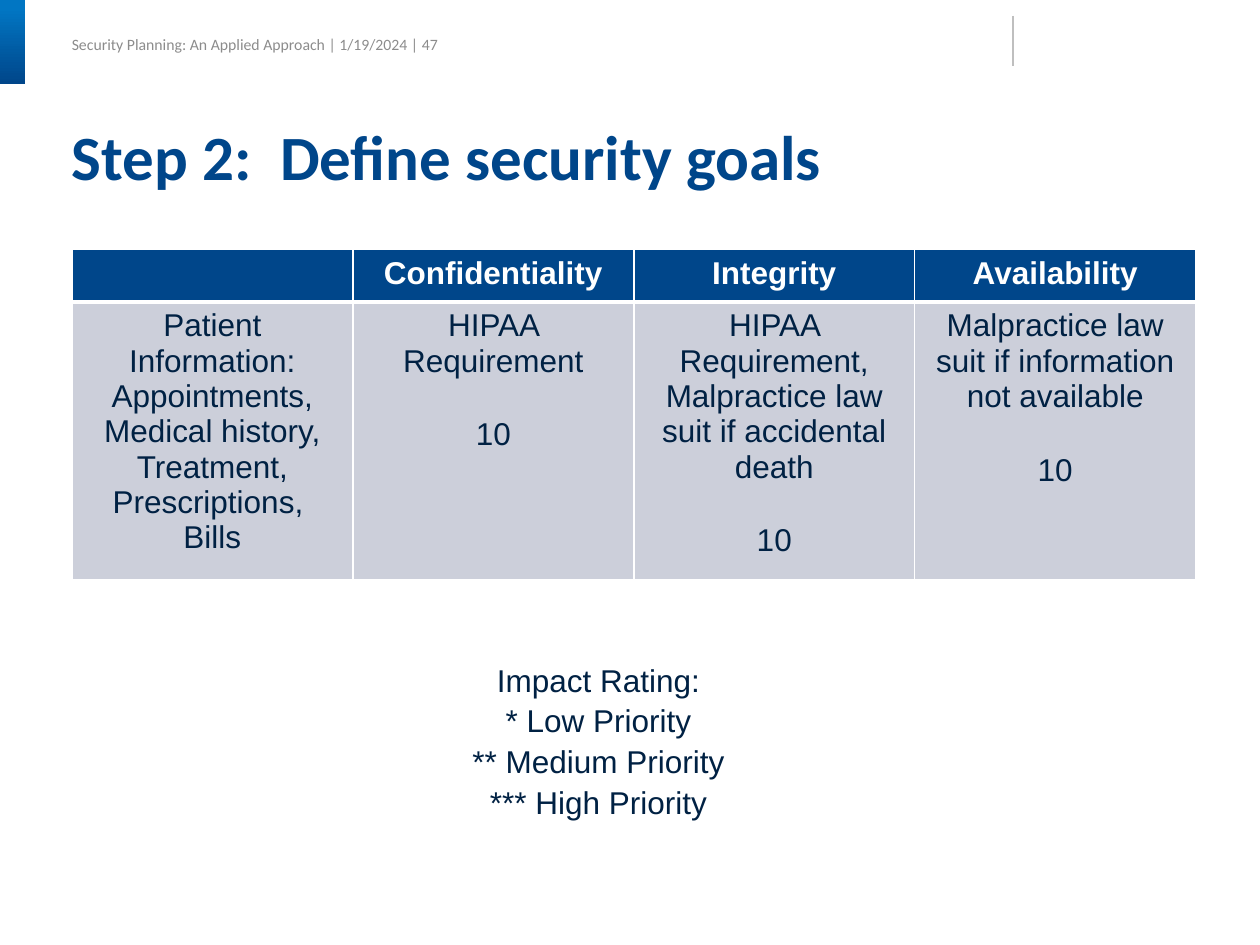
from dataclasses import dataclass

from lxml.etree import SubElement
from pptx import Presentation
from pptx.dml.color import RGBColor
from pptx.enum.shapes import MSO_CONNECTOR, MSO_SHAPE
from pptx.enum.text import MSO_ANCHOR, PP_ALIGN
from pptx.oxml.ns import qn
from pptx.util import Inches, Pt


@dataclass(frozen=True)
class Theme:
    """Colours, fonts and type sizes of the slide."""
    navy: str = "00468A"
    blue: str = "0176C3"
    ink: str = "002143"
    grey: str = "8C8C8C"
    rule: str = "BFBFBF"
    panel: str = "CCCFDA"
    white: str = "FFFFFF"
    heading_font: str = "Calibri"
    body_font: str = "Arial"
    footer_size: int = 9
    title_size: int = 36
    body_size: int = 18
    rating_gap: int = 22


@dataclass(frozen=True)
class Box:
    """A rectangle in slide units."""
    left: int
    top: int
    width: int
    height: int

    def inner(self, left, top, width, height):
        """Return an inner box given in percent of this one."""
        return Box(
            int(self.left + self.width * left / 100),
            int(self.top + self.height * top / 100),
            int(self.width * width / 100),
            int(self.height * height / 100),
        )

    def bounds(self):
        """Return left, top, width and height."""
        return self.left, self.top, self.width, self.height


THEME = Theme()
HEADINGS = ["", "Confidentiality", "Integrity", "Availability"]
GOALS = [
    (["Patient Information:", "Appointments,", "Medical history,",
      "Treatment, Prescriptions, ", "Bills"], None),
    (["HIPAA Requirement"], "10"),
    (["HIPAA Requirement,", "Malpractice law suit if accidental death"], "10"),
    (["Malpractice law suit if information not available"], "10"),
]
RATINGS = ["Impact Rating:", "* Low Priority", "** Medium Priority", "*** High Priority"]


def color(value):
    """Turn a hex string into a colour."""
    return RGBColor.from_string(value)


def write_lines(frame, lines, font, size, ink, bold=False, align=PP_ALIGN.LEFT, spacing=1.0):
    """Write one paragraph per line and return the last one."""
    for index, line in enumerate(lines):
        paragraph = frame.add_paragraph() if index else frame.paragraphs[0]
        paragraph.alignment = align
        paragraph.line_spacing = spacing
        run = paragraph.add_run()
        run.text = line
        run.font.name = font
        run.font.size = Pt(size)
        run.font.bold = bold
        run.font.color.rgb = color(ink)
    return paragraph


def add_text(slide, box, anchor=MSO_ANCHOR.TOP):
    """Add a wrapping text box without margins and return its frame."""
    frame = slide.shapes.add_textbox(*box.bounds()).text_frame
    frame.word_wrap = True
    frame.vertical_anchor = anchor
    frame.margin_left = frame.margin_right = 0
    frame.margin_top = frame.margin_bottom = 0
    return frame


def add_header(slide, box):
    """Place the corner block, running title and divider."""
    block = slide.shapes.add_shape(MSO_SHAPE.RECTANGLE, *box.inner(0, 0, 2, 100).bounds())
    block.shadow.inherit = False
    block.line.fill.background()
    block.fill.gradient()
    block.fill.gradient_angle = 270
    for stop, position, shade in zip(
        block.fill.gradient_stops, (0.1, 1), (THEME.blue, THEME.navy)
    ):
        stop.position = position
        stop.color.rgb = color(shade)

    frame = add_text(slide, box.inner(5.7, 36, 32, 34), MSO_ANCHOR.MIDDLE)
    write_lines(frame, ["Security Planning: An Applied Approach | 1/19/2024 | 47"],
                THEME.heading_font, THEME.footer_size, THEME.grey)

    divider = box.inner(80.4, 19, 0, 59)
    line = slide.shapes.add_connector(
        MSO_CONNECTOR.STRAIGHT, divider.left, divider.top,
        divider.left, divider.top + divider.height,
    )
    line.line.color.rgb = color(THEME.rule)
    line.line.width = Pt(0.75)
    SubElement(line._element.spPr, qn("a:effectLst"))


def add_title(slide, box):
    """Place the slide title."""
    write_lines(add_text(slide, box), ["Step 2:  Define security goals"],
                THEME.heading_font, THEME.title_size, THEME.navy, bold=True, spacing=0.9)


def style_cell(cell, fill, top, bottom):
    """Fill a cell and draw its white borders."""
    properties = cell._tc.get_or_add_tcPr()
    for side, width in (("lnL", 1), ("lnR", 1), ("lnT", top), ("lnB", bottom)):
        border = SubElement(properties, qn(f"a:{side}"), w=str(int(Pt(width))))
        solid = SubElement(border, qn("a:solidFill"))
        SubElement(solid, qn("a:srgbClr"), val=THEME.white)
    cell.fill.solid()
    cell.fill.fore_color.rgb = color(fill)


def add_goals_table(slide, box):
    """Place the table of security goals."""
    table = slide.shapes.add_table(2, len(HEADINGS), *box.bounds()).table
    table.horz_banding = False
    for row, share in zip(table.rows, (0.16, 0.84)):
        row.height = int(box.height * share)
    for column, (heading, (lines, rating)) in enumerate(zip(HEADINGS, GOALS)):
        head, body = table.cell(0, column), table.cell(1, column)
        style_cell(head, THEME.navy, 1, 3)
        style_cell(body, THEME.panel, 3, 1)
        if heading:
            write_lines(head.text_frame, [heading], THEME.body_font, THEME.body_size,
                        THEME.white, bold=True, align=PP_ALIGN.CENTER)
        last = write_lines(body.text_frame, lines + ([rating] if rating else []),
                           THEME.body_font, THEME.body_size, THEME.ink,
                           align=PP_ALIGN.CENTER)
        if rating:
            last.space_before = Pt(THEME.rating_gap)


def add_rating_key(slide, box):
    """Place the key to the impact ratings."""
    write_lines(add_text(slide, box), RATINGS, THEME.body_font, THEME.body_size,
                THEME.ink, align=PP_ALIGN.CENTER, spacing=1.08)


def main():
    """Build and save the slide."""
    presentation = Presentation()
    presentation.slide_width = Inches(10)
    presentation.slide_height = Inches(7.5)
    slide = presentation.slides.add_slide(presentation.slide_layouts[6])
    page = Box(0, 0, presentation.slide_width, presentation.slide_height)
    add_header(slide, page.inner(0, 0, 100, 8.9))
    add_title(slide, page.inner(5.7, 13.33, 89.2, 7.33))
    add_goals_table(slide, page.inner(5.7, 26.4, 89.2, 34.8))
    add_rating_key(slide, page.inner(22.5, 69.6, 50, 16.13))
    presentation.save("out.pptx")


if __name__ == "__main__":
    main()
